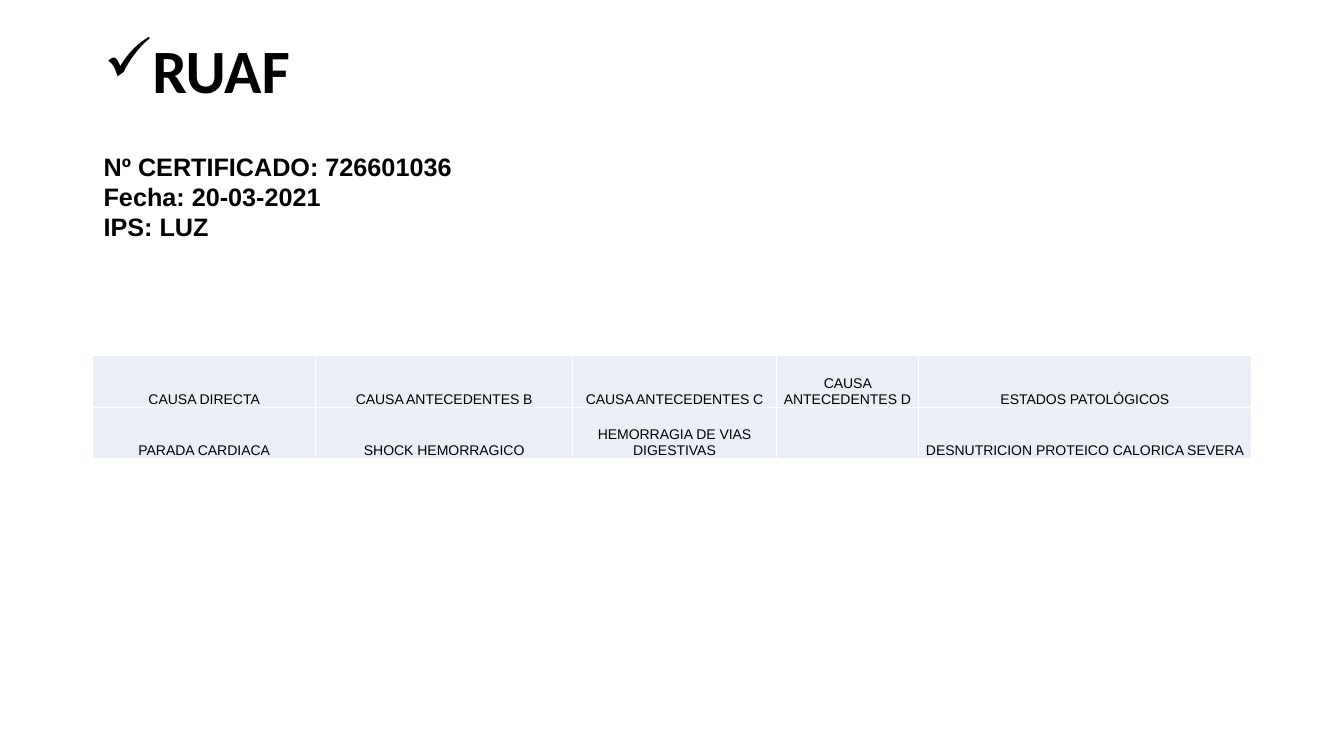
from lxml import etree
from pptx import Presentation
from pptx import util as u
from pptx.dml.color import RGBColor
from pptx.enum import text
from pptx.oxml import ns

BLACK = RGBColor(0x00, 0x00, 0x00)
WHITE = RGBColor(0xFF, 0xFF, 0xFF)
PALE_BLUE = RGBColor(0xEA, 0xEF, 0xF7)

HEADING = "RUAF"
CERTIFICATE = ["Nº CERTIFICADO: 726601036", "Fecha: 20-03-2021", "IPS: LUZ"]
CAUSES = [
    ("CAUSA DIRECTA", "CAUSA ANTECEDENTES B", "CAUSA ANTECEDENTES C",
     "CAUSA ANTECEDENTES D", "ESTADOS PATOLÓGICOS"),
    ("PARADA CARDIACA", "SHOCK HEMORRAGICO", "HEMORRAGIA DE VIAS DIGESTIVAS",
     "", "DESNUTRICION PROTEICO CALORICA SEVERA"),
]
COLUMN_WIDTHS = (2.21, 2.55, 2.02, 1.41, 3.3)
ROW_HEIGHT = 0.51

HEADING_FONT = {"name": "Calibri", "size": u.Pt(44), "bold": True}
CERTIFICATE_FONT = {"name": "Arial", "size": u.Pt(18), "bold": True}
CAUSE_FONT = {"name": "Arial", "size": u.Pt(10), "bold": False}
CELL_FORMAT = {
    "vertical_anchor": text.MSO_ANCHOR.BOTTOM,
    "margin_left": u.Inches(0.01), "margin_right": u.Inches(0.01),
    "margin_top": u.Inches(0.01), "margin_bottom": 0,
}


def apply(target, values):
    for key, value in values.items():
        setattr(target, key, value)


def write(paragraph, words, font, align):
    paragraph.alignment = align
    run = paragraph.add_run()
    run.text = words
    apply(run.font, font)
    run.font.color.rgb = BLACK


def add_check_bullet(paragraph):
    properties = paragraph._p.get_or_add_pPr()
    properties.set("marL", str(u.Inches(0.31)))
    properties.set("indent", str(u.Inches(-0.31)))
    etree.SubElement(properties, ns.qn("a:buChar"), char="✓")


def add_borders(cell):
    properties = cell._tc.get_or_add_tcPr()
    for side in ("lnL", "lnR", "lnT", "lnB"):
        line = etree.SubElement(properties, ns.qn(f"a:{side}"), w=str(u.Pt(1)))
        fill = etree.SubElement(line, ns.qn("a:solidFill"))
        etree.SubElement(fill, ns.qn("a:srgbClr"), val=str(WHITE))


def place_heading(slide):
    heading = slide.shapes.title
    apply(heading, {"left": u.Inches(0.93), "top": 0,
                    "width": u.Inches(11.5), "height": u.Inches(1.45)})
    apply(heading.text_frame, {"vertical_anchor": text.MSO_ANCHOR.MIDDLE,
                               "auto_size": text.MSO_AUTO_SIZE.NONE})
    paragraph = heading.text_frame.paragraphs[0]
    paragraph.line_spacing = 0.9
    write(paragraph, HEADING, HEADING_FONT, text.PP_ALIGN.LEFT)
    add_check_bullet(paragraph)


def place_certificate(slide):
    frame = slide.shapes.add_textbox(u.Inches(0.93), u.Inches(1.45),
                                     u.Inches(9.5), u.Inches(1.01)).text_frame
    apply(frame, {"word_wrap": True,
                  "auto_size": text.MSO_AUTO_SIZE.SHAPE_TO_FIT_TEXT})
    for index, words in enumerate(CERTIFICATE):
        paragraph = frame.add_paragraph() if index else frame.paragraphs[0]
        write(paragraph, words, CERTIFICATE_FONT, text.PP_ALIGN.LEFT)


def place_causes(slide):
    causes = slide.shapes.add_table(
        len(CAUSES), len(COLUMN_WIDTHS), u.Inches(0.92), u.Inches(3.53),
        u.Inches(sum(COLUMN_WIDTHS)), u.Inches(ROW_HEIGHT * len(CAUSES))).table
    apply(causes, {"first_row": False, "horz_banding": False})
    for column, width in zip(causes.columns, COLUMN_WIDTHS):
        column.width = u.Inches(width)
    for row, entries in zip(causes.rows, CAUSES):
        row.height = u.Inches(ROW_HEIGHT)
        for cell, words in zip(row.cells, entries):
            apply(cell, CELL_FORMAT)
            add_borders(cell)
            cell.fill.solid()
            cell.fill.fore_color.rgb = PALE_BLUE
            if words:
                write(cell.text_frame.paragraphs[0], words, CAUSE_FONT,
                      text.PP_ALIGN.CENTER)


def main():
    deck = Presentation()
    apply(deck, {"slide_width": u.Inches(13.33), "slide_height": u.Inches(7.5)})
    slide = deck.slides.add_slide(deck.slide_layouts.get_by_name("Title Only"))
    place_heading(slide)
    place_certificate(slide)
    place_causes(slide)
    deck.save("out.pptx")


if __name__ == "__main__":
    main()
